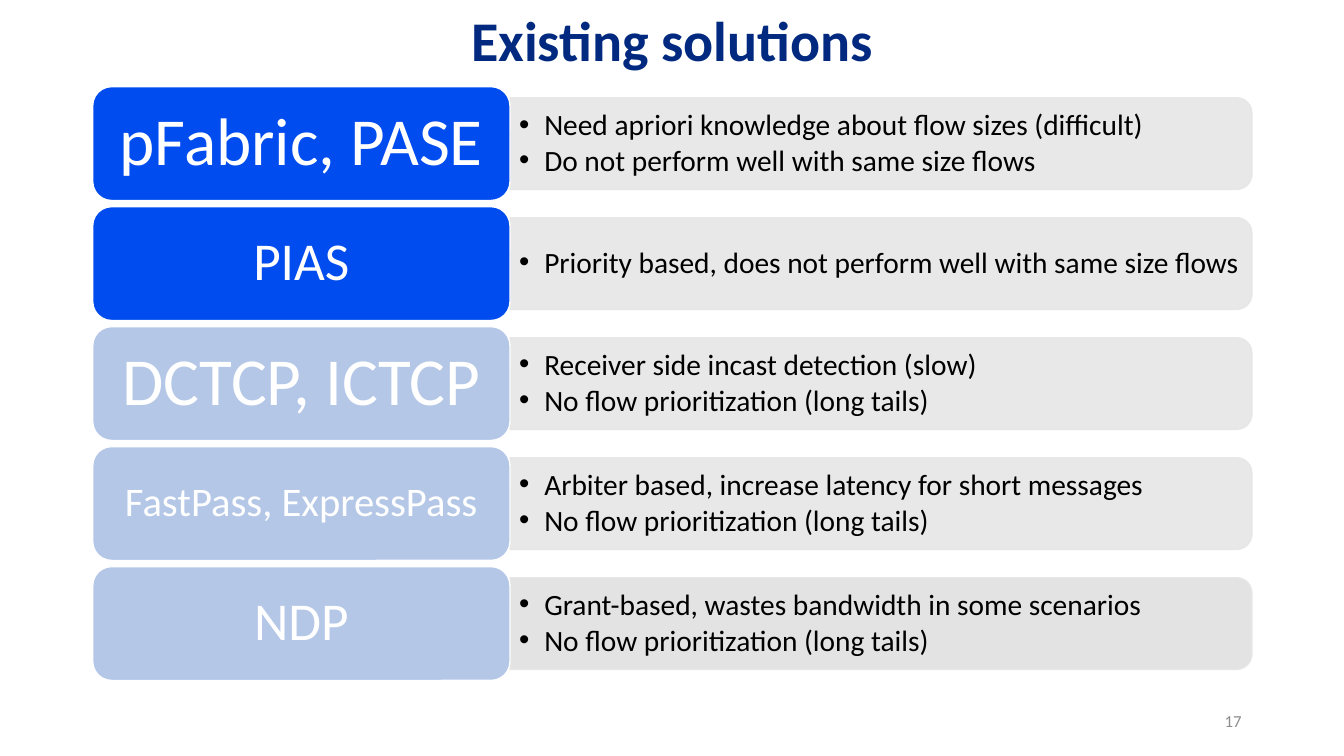
import pptx
import pptx.dml.color
import pptx.enum.shapes
import pptx.enum.text
import pptx.oxml.ns
import pptx.util
from lxml import etree

Pt = pptx.util.Pt
SHAPES = pptx.enum.shapes.MSO_SHAPE
ALIGN = pptx.enum.text.PP_ALIGN
qn = pptx.oxml.ns.qn

BLUE, PALE, WHITE = "004CEF", "B4C7E7", "FFFFFF"
LABEL_LEFT, LABEL_TOP, LABEL_WIDTH, LABEL_HEIGHT = 66.24, 61.92, 298.08, 81.36
BAND_WIDTH, BAND_HEIGHT = 529.92, 65.52
ROW_PITCH = 85.7
NO_PRIORITY = "No flow prioritization (long tails)"
SOLUTIONS = [
    ("pFabric, PASE", 48, BLUE, "E7E6E6",
     ["Need apriori knowledge about flow sizes (difficult)",
      "Do not perform well with same size flows"]),
    ("PIAS", 38, BLUE, "E7E6E6",
     ["Priority based, does not perform well with same size flows"]),
    ("DCTCP, ICTCP", 48, PALE, "E7E6E6",
     ["Receiver side incast detection (slow)", NO_PRIORITY]),
    ("FastPass, ExpressPass", 29, PALE, "E7E6E6",
     ["Arbiter based, increase latency for short messages", NO_PRIORITY]),
    ("NDP", 38, PALE, "E1E1E1",
     ["Grant-based, wastes bandwidth in some scenarios", NO_PRIORITY]),
]


def color(value):
    return pptx.dml.color.RGBColor.from_string(value)


class SlideBuilder:
    font = "Calibri"

    def __init__(self, slide):
        self.slide = slide

    def fill_text(self, shape, lines, size, ink, align, bold=False,
                  bullets=False, spacing=0.9, insets=(7.2, 3.6, 7.2, 3.6)):
        frame = shape.text_frame
        frame.word_wrap = True
        frame.vertical_anchor = pptx.enum.text.MSO_ANCHOR.MIDDLE
        frame.margin_left, frame.margin_top, frame.margin_right, frame.margin_bottom = map(Pt, insets)
        for index, line in enumerate(lines):
            para = frame.add_paragraph() if index else frame.paragraphs[0]
            para.alignment = align
            para.line_spacing = spacing
            if bullets:
                para.space_after = Pt(3)
                props = para._p.get_or_add_pPr()
                props.set("marL", str(Pt(18)))
                props.set("indent", str(Pt(-18)))
                etree.SubElement(props, qn("a:buFont"), typeface="Arial")
                etree.SubElement(props, qn("a:buChar"), char="•")
            span = para.add_run()
            span.text = line
            span.font.name = self.font
            span.font.size = Pt(size)
            span.font.bold = bold
            span.font.color.rgb = color(ink)

    def text(self, left, top, width, height, lines, size, ink, align, **style):
        box = self.slide.shapes.add_textbox(Pt(left), Pt(top), Pt(width), Pt(height))
        self.fill_text(box, lines, size, ink, align, **style)

    def shape(self, kind, left, top, width, height, fill, line):
        shape = self.slide.shapes.add_shape(kind, Pt(left), Pt(top), Pt(width), Pt(height))
        shape.shadow.inherit = False
        shape.fill.solid()
        shape.fill.fore_color.rgb = color(fill)
        shape.line.color.rgb = color(line)
        shape.line.width = Pt(1)
        return shape

    def band(self, left, top, width, height, fill, lines):
        shape = self.shape(SHAPES.ROUND_2_SAME_RECTANGLE,
                           left + (width - height) / 2, top + (height - width) / 2,
                           height, width, fill, "E7E6E6")
        shape.rotation = 90
        for tint in shape._element.spPr.iter(qn("a:srgbClr")):
            etree.SubElement(tint, qn("a:alpha"), val="90000")
        self.text(left, top, width, height, lines, 21, "000000", ALIGN.LEFT,
                  bullets=True, insets=(6.5, 3, 3, 3))

    def label(self, left, top, width, height, fill, name, size):
        shape = self.shape(SHAPES.ROUNDED_RECTANGLE, left, top, width, height, fill, WHITE)
        self.fill_text(shape, [name], size, WHITE, ALIGN.CENTER, insets=(12, 7, 12, 7))


def main():
    deck = pptx.Presentation()
    deck.slide_width, deck.slide_height = Pt(960), Pt(540)
    page = SlideBuilder(deck.slides.add_slide(deck.slide_layouts[6]))
    for row, (name, size, fill, band_fill, points) in enumerate(SOLUTIONS):
        top = LABEL_TOP + row * ROW_PITCH
        page.band(LABEL_LEFT + LABEL_WIDTH, top + (LABEL_HEIGHT - BAND_HEIGHT) / 2,
                  BAND_WIDTH, BAND_HEIGHT, band_fill, points)
        page.label(LABEL_LEFT, top, LABEL_WIDTH, LABEL_HEIGHT, fill, name, size)
    page.text(678, 500.4, 216, 28.8, ["17"], 12, "8C8C8C", ALIGN.RIGHT, spacing=1.0)
    page.text(0, 0.72, 960, 61.2, ["Existing solutions"], 40, "00297F", ALIGN.CENTER, bold=True)
    deck.save("out.pptx")


if __name__ == "__main__":
    main()
